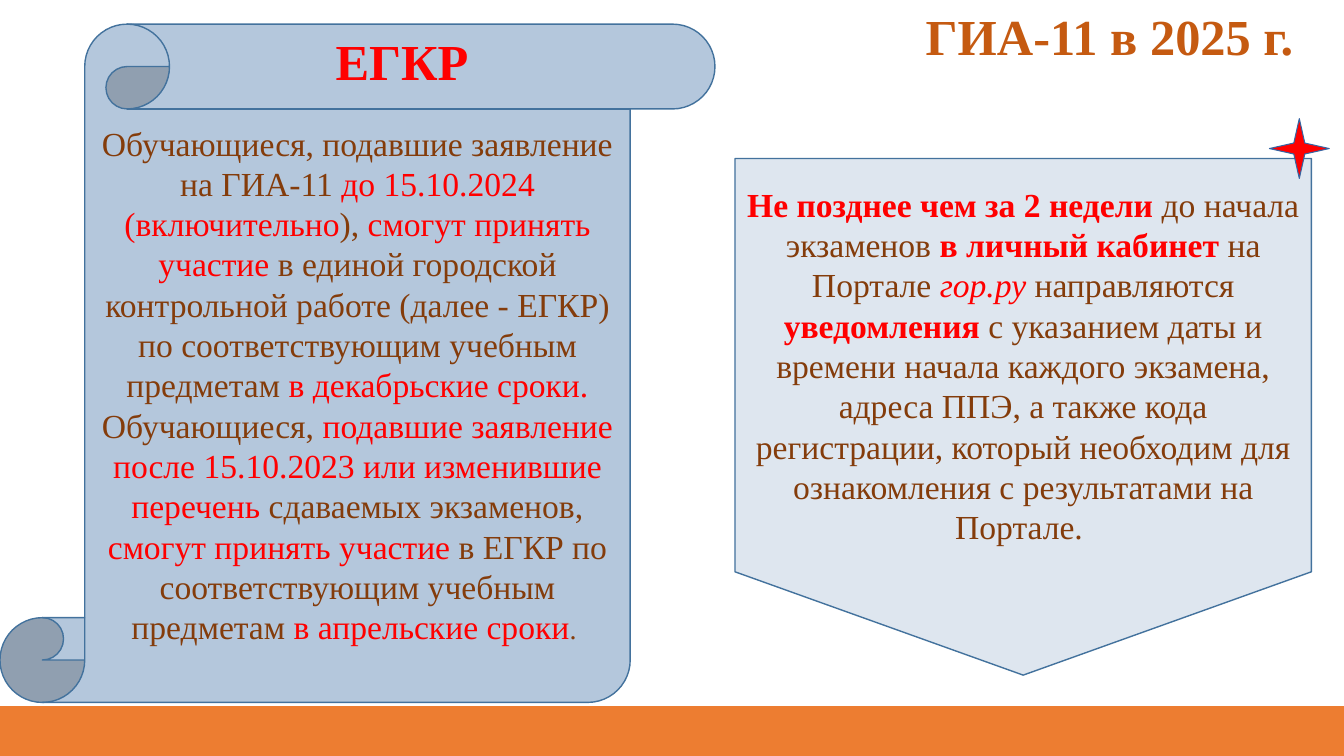
from pptx import Presentation
from pptx.dml.color import RGBColor
from pptx.enum.shapes import MSO_SHAPE
from pptx.enum.text import MSO_ANCHOR, PP_ALIGN
from pptx.util import Emu, Pt

PX = 9525
BROWN, RED, ORANGE, OUTLINE = "843C0B", "FF0000", "ED7D31", "43729D"


def color(value):
    return RGBColor.from_string(value)


class Page:
    """Draws styled elements on one slide, measured in px."""

    font = "Times New Roman"

    def __init__(self, deck):
        self.slide = deck.slides.add_slide(deck.slide_layouts[5])

    def fill_text(self, shape, spans, size, ink, bold=False,
                  align=PP_ALIGN.CENTER, anchor=MSO_ANCHOR.TOP):
        frame = shape.text_frame
        frame.word_wrap = True
        frame.vertical_anchor = anchor
        para = frame.paragraphs[0]
        para.alignment = align
        para.line_spacing = 1.0
        para.font.name = self.font
        para.font.size = Pt(size)
        para.font.bold = bold
        para.font.color.rgb = color(ink)
        for text, style in spans:
            span = para.add_run()
            span.text = text
            if "red" in style:
                span.font.color.rgb = color(RED)
            if "bold" in style:
                span.font.bold = True
            if "italic" in style:
                span.font.italic = True
            if "small" in style:
                span.font.size = Pt(20)

    def title(self, text, left, top, width, height):
        box = self.slide.shapes.title
        box.left, box.top, box.width, box.height = (
            Emu(n * PX) for n in (left, top, width, height))
        self.fill_text(box, [(text, "")], 36, "C55A11", True, PP_ALIGN.LEFT)

    def heading(self, text, left, top, width, height):
        box = self.slide.shapes.add_textbox(
            *(Emu(n * PX) for n in (left, top, width, height)))
        self.fill_text(box, [(text, "")], 36, RED, True)

    def shape(self, kind, left, top, width, height, fill, line):
        shape = self.slide.shapes.add_shape(
            kind, *(Emu(n * PX) for n in (left, top, width, height)))
        shape.shadow.inherit = False
        shape.fill.solid()
        shape.fill.fore_color.rgb = color(fill)
        shape.line.color.rgb = color(line)
        shape.line.width = Pt(1)
        return shape

    def panel(self, kind, left, top, width, height, fill, spans):
        shape = self.shape(kind, left, top, width, height, fill, OUTLINE)
        self.fill_text(shape, spans, 24, BROWN, anchor=MSO_ANCHOR.MIDDLE)

    def star(self, left, top, size):
        star = self.shape(MSO_SHAPE.STAR_4_POINT, left, top, size, size, RED, "3465A4")
        star.adjustments[0] = 0.13
        star.line.width = Pt(0)


def main():
    deck = Presentation()
    deck.slide_width, deck.slide_height = Emu(1280 * PX), Emu(720 * PX)
    page = Page(deck)
    page.title("ГИА-11 в 2025 г.", 872, 0, 408, 83)
    page.shape(MSO_SHAPE.RECTANGLE, 0, 673, 1280, 47, ORANGE, ORANGE)
    page.panel(MSO_SHAPE.VERTICAL_SCROLL, 0, 23, 681, 646, "B4C7DC", [
        ("Обучающиеся, подавшие заявление на ГИА-11 ", ""),
        ("до 15.10.2024 (включительно", "red"),
        ("), ", ""),
        ("смогут принять участие", "red"),
        (" в единой городской контрольной работе (далее - ЕГКР) "
         "по соответствующим учебным предметам ", ""),
        ("в декабрьские сроки. ", "red"),
        ("Обучающиеся, ", ""),
        ("подавшие заявление после 15.10.2023 или изменившие перечень", "red"),
        (" сдаваемых экзаменов, ", ""),
        ("смогут принять участие ", "red"),
        ("в ЕГКР по соответствующим учебным предметам ", ""),
        ("в апрельские сроки", "red"),
        (". ", "small"),
    ])
    page.panel(MSO_SHAPE.FLOWCHART_OFFPAGE_CONNECTOR, 700, 151, 549, 492, "DEE6EF", [
        ("Не позднее чем за 2 недели ", "red bold"),
        ("до начала экзаменов ", ""),
        ("в личный кабинет", "red bold"),
        (" на Портале ", ""),
        ("гор.ру ", "red italic"),
        ("направляются ", ""),
        ("уведомления ", "red bold"),
        ("с указанием даты и времени начала каждого экзамена, адреса ППЭ, "
         "а также кода регистрации, который необходим для ознакомления "
         "с результатами на Портале. ", ""),
    ])
    page.heading("ЕГКР", 254, 24, 258, 67)
    page.star(1209, 113, 57)
    deck.save("out.pptx")


if __name__ == "__main__":
    main()
